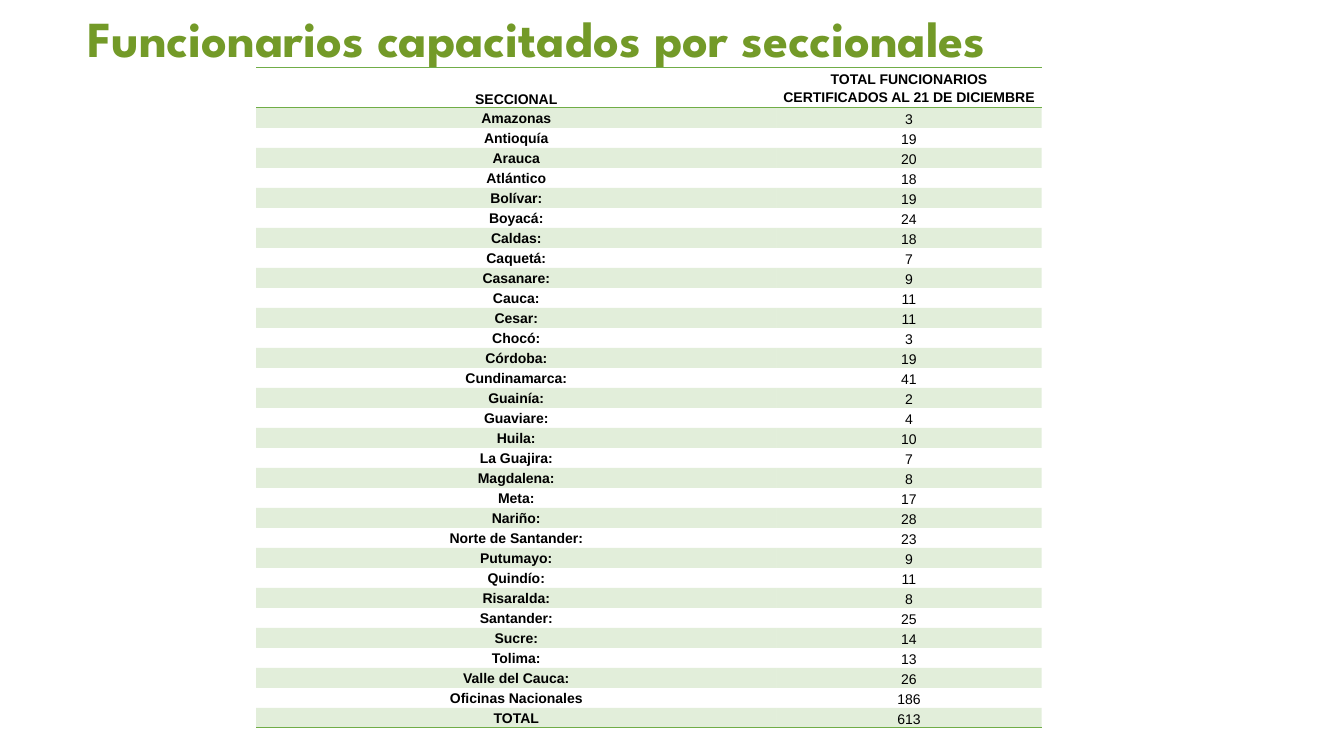
from lxml import etree
from pptx import Presentation
from pptx.dml.color import RGBColor
from pptx.enum.text import MSO_ANCHOR, PP_ALIGN
from pptx.oxml.ns import qn
from pptx.util import Inches, Pt

LEFT, CENTER = PP_ALIGN.LEFT, PP_ALIGN.CENTER
MIDDLE, BOTTOM = MSO_ANCHOR.MIDDLE, MSO_ANCHOR.BOTTOM
COLORS = {"title": "739A28", "text": "000000", "green": "70AD47"}
PLAIN_STYLE = "{2D5ABB26-0587-4C30-8999-92F81FD0307C}"
BAND_ALPHA = "20000"
HEADER_HEIGHT = 0.4

TITLE = "Funcionarios capacitados por seccionales"
HEADINGS = ("SECCIONAL", "TOTAL FUNCIONARIOS CERTIFICADOS AL 21 DE DICIEMBRE")
SECCIONALES = [
    ("Amazonas", 3), ("Antioquía", 19), ("Arauca", 20), ("Atlántico", 18),
    ("Bolívar:", 19), ("Boyacá:", 24), ("Caldas:", 18), ("Caquetá:", 7),
    ("Casanare:", 9), ("Cauca:", 11), ("Cesar:", 11), ("Chocó:", 3),
    ("Córdoba:", 19), ("Cundinamarca:", 41), ("Guainía:", 2),
    ("Guaviare:", 4), ("Huila:", 10), ("La Guajira:", 7),
    ("Magdalena:", 8), ("Meta:", 17), ("Nariño:", 28),
    ("Norte de Santander:", 23), ("Putumayo:", 9), ("Quindío:", 11),
    ("Risaralda:", 8), ("Santander:", 25), ("Sucre:", 14), ("Tolima:", 13),
    ("Valle del Cauca:", 26), ("Oficinas Nacionales", 186), ("TOTAL", 613),
]


def write_text(frame, text, *, size=10, font="Arial", color="text",
               bold=False, align=CENTER, spacing=1.15):
    frame.word_wrap = True
    paragraph = frame.paragraphs[0]
    paragraph.alignment = align
    paragraph.line_spacing = spacing
    run = paragraph.add_run()
    run.text = text
    run.font.size = Pt(size)
    run.font.name = font
    run.font.bold = bold
    run.font.color.rgb = RGBColor.from_string(COLORS[color])


def add_title(slide, left, top, width, height):
    title = slide.shapes.add_textbox(
        Inches(left), Inches(top), Inches(width), Inches(height)).text_frame
    title.margin_left = title.margin_right = 0
    title.margin_top = title.margin_bottom = 0
    title.vertical_anchor = MIDDLE
    write_text(title, TITLE, size=36, font="League Spartan", color="title",
               bold=True, align=LEFT, spacing=0.9)


def shade_cell(cell, banded):
    if not banded:
        cell.fill.background()
        return
    cell.fill.solid()
    cell.fill.fore_color.rgb = RGBColor.from_string(COLORS["green"])
    tint = cell._tc.get_or_add_tcPr().find(f".//{qn('a:srgbClr')}")
    etree.SubElement(tint, qn("a:alpha"), val=BAND_ALPHA)


def rule_cell(cell, sides):
    properties = cell._tc.get_or_add_tcPr()
    for position, side in enumerate(sides):
        line = etree.Element(qn(f"a:ln{side}"), w=str(Pt(1)))
        fill = etree.SubElement(line, qn("a:solidFill"))
        etree.SubElement(fill, qn("a:srgbClr"), val=COLORS["green"])
        properties.insert(position, line)


def fill_cell(cell, text, *, bold, anchor, banded, rules):
    cell.margin_left = cell.margin_right = Inches(0.03)
    cell.margin_top = cell.margin_bottom = 0
    cell.vertical_anchor = anchor
    write_text(cell.text_frame, text, bold=bold)
    shade_cell(cell, banded)
    rule_cell(cell, rules)


def add_seccionales_table(slide, left, top, width, height):
    last = len(SECCIONALES)
    frame = slide.shapes.add_table(
        last + 1, 2, Inches(left), Inches(top), Inches(width), Inches(height))
    frame.element.find(f".//{qn('a:tableStyleId')}").text = PLAIN_STYLE
    table = frame.table
    total_width = 2.63
    table.columns[0].width = Inches(width - total_width)
    table.columns[1].width = Inches(total_width)
    for row in table.rows:
        row.height = Inches((height - HEADER_HEIGHT) / last)
    table.rows[0].height = Inches(HEADER_HEIGHT)

    for column, (heading, anchor) in enumerate(zip(HEADINGS, (BOTTOM, MIDDLE))):
        fill_cell(table.cell(0, column), heading, bold=True, anchor=anchor,
                  banded=False, rules="TB")
    for index, (seccional, total) in enumerate(SECCIONALES, start=1):
        row_format = {"banded": index % 2 == 1,
                      "rules": "B" if index == last else ""}
        fill_cell(table.cell(index, 0), seccional, bold=True, anchor=MIDDLE,
                  **row_format)
        fill_cell(table.cell(index, 1), str(total), bold=False, anchor=BOTTOM,
                  **row_format)


def main():
    presentation = Presentation()
    presentation.slide_width = Inches(13.33)
    presentation.slide_height = Inches(7.5)
    slide = presentation.slides.add_slide(presentation.slide_layouts[6])
    add_title(slide, 0.87, 0.13, 11.5, 0.55)
    add_seccionales_table(slide, 2.54, 0.67, 7.79, 6.56)
    presentation.save("out.pptx")


if __name__ == "__main__":
    main()
